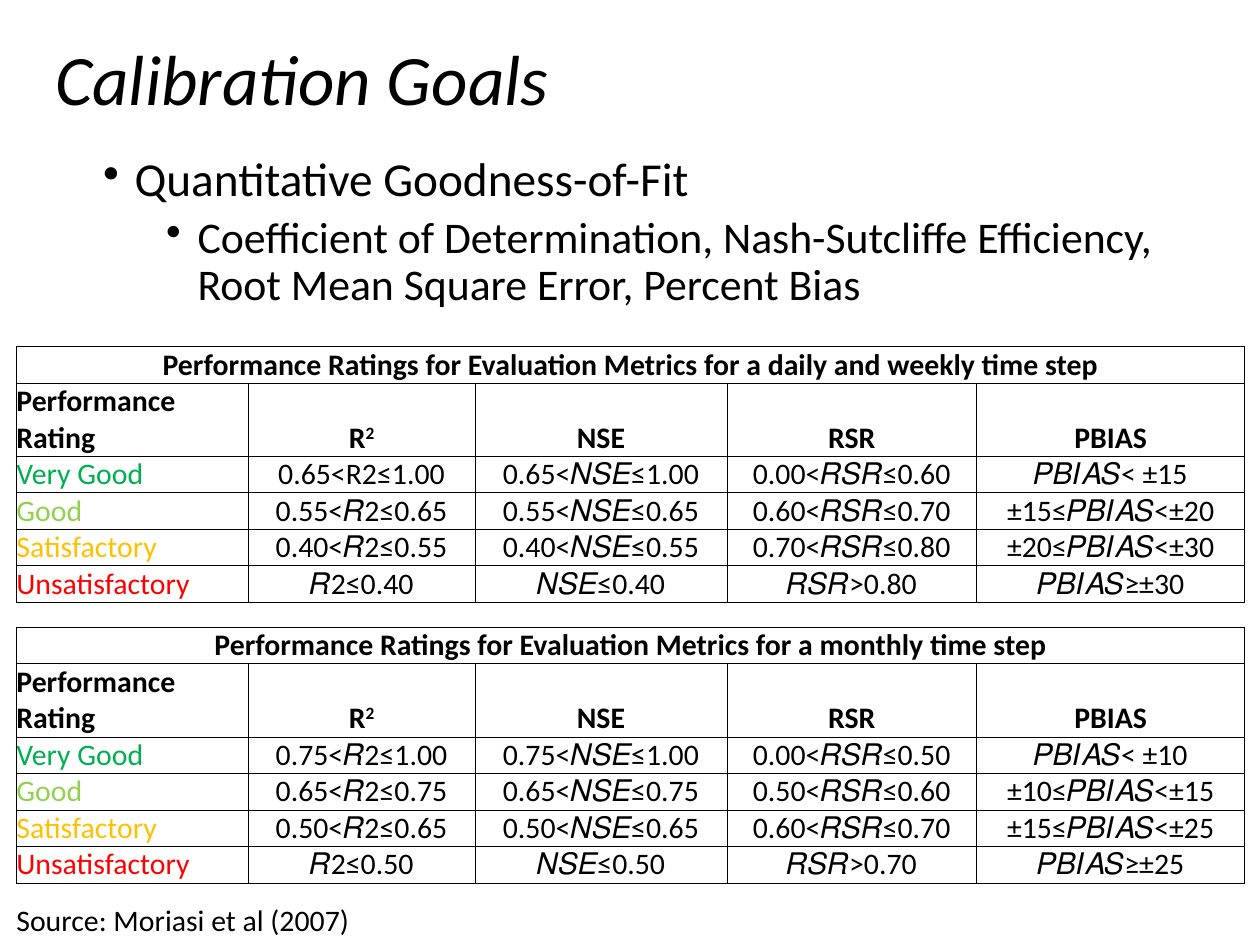
from lxml.etree import SubElement as Sub
from pptx import Presentation
from pptx.dml.color import RGBColor
from pptx.enum.text import MSO_ANCHOR as Anchor, MSO_AUTO_SIZE as Auto, PP_ALIGN as Align
from pptx.oxml.ns import qn
from pptx.util import Inches, Pt

FONT = "Calibri"
SIZE = 17
COLS = [1.84, 1.8, 2, 1.98, 2.13]
LINE, HEAD = 0.29, 0.58
HEADS = ["Performance Rating", "R²", "NSE", "RSR", "PBIAS"]
RATINGS = [("Very Good", "00B050"), ("Good", "92D050"),
           ("Satisfactory", "FFC000"), ("Unsatisfactory", "FF0000")]
DAILY = [
    ["0.65<R2≤1.00", "0.65<𝑁𝑆𝐸≤1.00", "0.00<𝑅𝑆𝑅≤0.60", "𝑃𝐵𝐼𝐴𝑆< ±15"],
    ["0.55<𝑅2≤0.65", "0.55<𝑁𝑆𝐸≤0.65", "0.60<𝑅𝑆𝑅≤0.70", "±15≤𝑃𝐵𝐼𝐴𝑆<±20"],
    ["0.40<𝑅2≤0.55", "0.40<𝑁𝑆𝐸≤0.55", "0.70<𝑅𝑆𝑅≤0.80", "±20≤𝑃𝐵𝐼𝐴𝑆<±30"],
    ["𝑅2≤0.40", "𝑁𝑆𝐸≤0.40", "𝑅𝑆𝑅>0.80", "𝑃𝐵𝐼𝐴𝑆≥±30"],
]
MONTHLY = [
    ["0.75<𝑅2≤1.00", "0.75<𝑁𝑆𝐸≤1.00", "0.00<𝑅𝑆𝑅≤0.50", "𝑃𝐵𝐼𝐴𝑆< ±10"],
    ["0.65<𝑅2≤0.75", "0.65<𝑁𝑆𝐸≤0.75", "0.50<𝑅𝑆𝑅≤0.60", "±10≤𝑃𝐵𝐼𝐴𝑆<±15"],
    ["0.50<𝑅2≤0.65", "0.50<𝑁𝑆𝐸≤0.65", "0.60<𝑅𝑆𝑅≤0.70", "±15≤𝑃𝐵𝐼𝐴𝑆<±25"],
    ["𝑅2≤0.50", "𝑁𝑆𝐸≤0.50", "𝑅𝑆𝑅>0.70", "𝑃𝐵𝐼𝐴𝑆≥±25"],
]


def color(code):
    return RGBColor.from_string(code)


def style(para, size, code="000000", bold=False, italic=False):
    font = para.font
    font.name, font.size, font.bold, font.italic = FONT, Pt(size), bold, italic
    font.color.rgb = color(code)


def add_title(slide, box):
    title = slide.shapes.title
    title.left, title.top, title.width, title.height = map(Inches, box)
    frame = title.text_frame
    frame.text = "Calibration Goals"
    frame.auto_size = Auto.NONE
    frame.vertical_anchor = Anchor.BOTTOM
    para = frame.paragraphs[0]
    para.alignment = Align.LEFT
    para.line_spacing = 0.9
    style(para, 40.5, italic=True)


def add_goals(slide, box):
    frame = slide.shapes.add_textbox(*map(Inches, box)).text_frame
    frame.word_wrap = True
    goals = [
        ("Quantitative Goodness-of-Fit", 27, 10, 0.25),
        ("Coefficient of Determination, Nash-Sutcliffe Efficiency, "
         "Root Mean Square Error, Percent Bias", 25, 5, 0.75),
    ]
    for level, (text, size, space, indent) in enumerate(goals):
        para = frame.add_paragraph() if level else frame.paragraphs[0]
        para.text, para.level = text, level
        para.line_spacing = 0.9
        para.space_before = Pt(space)
        style(para, size)
        props = para._p.get_or_add_pPr()
        props.set("marL", str(Inches(indent)))
        props.set("indent", str(Inches(-0.25)))
        bullet = props.makeelement(qn("a:buChar"), {"char": "•"})
        props.find(qn("a:defRPr")).addprevious(bullet)


def set_edges(cell, drawn):
    props = cell._tc.get_or_add_tcPr()
    for side in "LRTB":
        edge = Sub(props, qn("a:ln" + side), w=str(Pt(0.5)))
        if side in drawn:
            fill = Sub(edge, qn("a:solidFill"))
            Sub(fill, qn("a:srgbClr"), val="000000")
        else:
            Sub(edge, qn("a:noFill"))


def set_cell(cell, text="", code="000000", bold=False, center=True,
             edges="LRTB", size=SIZE):
    cell.margin_left = cell.margin_right = cell.margin_top = cell.margin_bottom = 0
    cell.vertical_anchor = Anchor.BOTTOM
    set_edges(cell, edges)
    if edges == "LRTB":
        cell.fill.solid()
        cell.fill.fore_color.rgb = color("FFFFFF")
    else:
        cell.fill.background()
    para = cell.text_frame.paragraphs[0]
    para.alignment = Align.CENTER if center else Align.LEFT
    style(para, size, code, bold)
    if not text:
        Sub(para._p, qn("a:endParaRPr"), sz=str(size * 100))
    elif text.endswith("²"):
        para.add_run().text = text[:-1]
        power = para.add_run()
        power.text = "2"
        power.font._element.set("baseline", "30000")
    else:
        para.add_run().text = text


def fill_block(table, top, step, ranges):
    caption = f"Performance Ratings for Evaluation Metrics for a {step} time step"
    for col, head in enumerate(HEADS):
        set_cell(table.cell(top, col), "" if col else caption, bold=True)
        set_cell(table.cell(top + 1, col), head, bold=True, center=col > 0)
    table.cell(top, 0).merge(table.cell(top, len(COLS) - 1))
    for row, ((name, code), values) in enumerate(zip(RATINGS, ranges), top + 2):
        set_cell(table.cell(row, 0), name, code, center=False)
        for col, value in enumerate(values, 1):
            set_cell(table.cell(row, col), value)


def add_ratings(slide, left, top):
    block = [LINE, HEAD] + [LINE] * len(RATINGS)
    rows = block + [0.2] + block + [0.16, LINE]
    table = slide.shapes.add_table(
        len(rows), len(COLS), Inches(left), Inches(top),
        Inches(sum(COLS)), Inches(sum(rows))).table
    table.first_row = table.horz_banding = False
    for col, width in zip(table.columns, COLS):
        col.width = Inches(width)
    for row, height in zip(table.rows, rows):
        row.height = Inches(height)
    gap = len(block)
    last = len(rows) - 1
    fill_block(table, 0, "daily and weekly", DAILY)
    fill_block(table, gap + 1, "monthly", MONTHLY)
    for col in range(len(COLS)):
        set_cell(table.cell(gap, col), edges="TB", size=8)
        set_cell(table.cell(last - 1, col), edges="T", size=8)
        source = "" if col else "Source: Moriasi et al (2007)"
        set_cell(table.cell(last, col), source, center=False, edges="")
    table.cell(last, 0).merge(table.cell(last, 1))


def main():
    deck = Presentation()
    deck.slide_width, deck.slide_height = Inches(10), Inches(7.5)
    slide = deck.slides.add_slide(deck.slide_layouts[5])
    add_title(slide, (0.34, 0.18, 9.38, 0.83))
    add_goals(slide, (0.72, 1.19, 9.16, 2.8))
    add_ratings(slide, 0.13, 2.75)
    deck.save("out.pptx")


if __name__ == "__main__":
    main()
